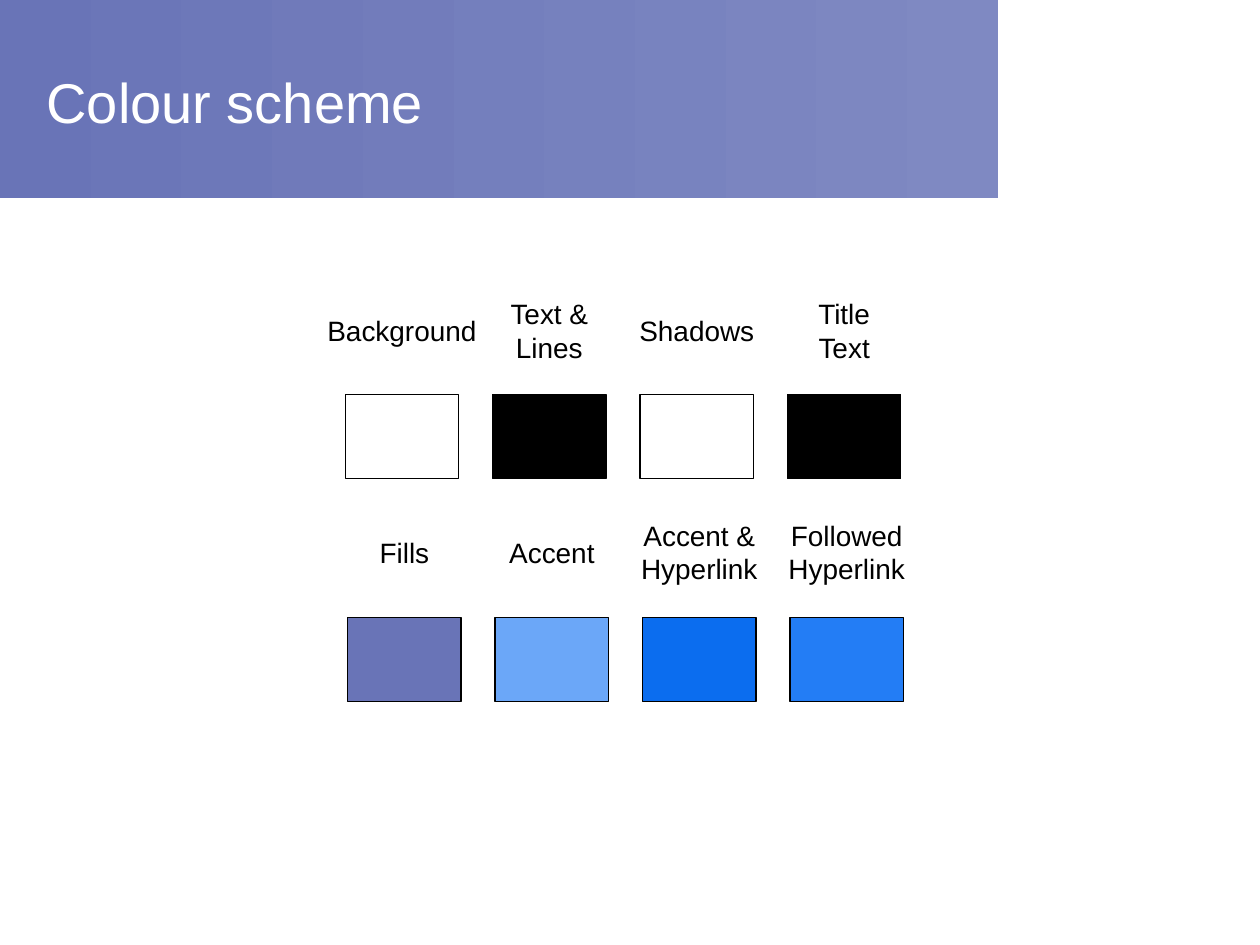
from pptx import Presentation
from pptx.dml.color import RGBColor
from pptx.enum import shapes, text
from pptx.util import Inches, Pt

COLORS = {
    "white": "FFFFFF",
    "black": "000000",
    "fills": "6974B7",
    "fade": "7F89C2",
    "accent": "6BA7F8",
    "link": "0B6DEF",
    "visited": "237DF5",
}
PITCH = 1.17
WIDE, HIGH = 0.9, 0.67

# Each row: left edge, swatch top, label centre, then (label, width, colour).
# "\n" starts a paragraph, "\v" breaks a line within one.
ROWS = [
    (2.74, 3.13, 2.62, [
        ("Background", 1.39, "white"),
        ("Text &\nLines", 0.84, "black"),
        ("Shadows", 1.11, "white"),
        ("Title\vText", 0.63, "black"),
    ]),
    (2.76, 4.9, 4.38, [
        ("Fills", 0.59, "fills"),
        ("Accent", 0.88, "accent"),
        ("Accent &\nHyperlink", 1.12, "link"),
        ("Followed\nHyperlink", 1.12, "visited"),
    ]),
]


def rgb(name):
    return RGBColor.from_string(COLORS[name])


def add_text(slide, words, x, y, w, h, size=16, color="black",
             align=text.PP_ALIGN.CENTER, wrap=False, pad=0):
    frame = slide.shapes.add_textbox(
        Inches(x), Inches(y), Inches(w), Inches(h)).text_frame
    frame.word_wrap = wrap
    frame.auto_size = (text.MSO_AUTO_SIZE.NONE if wrap
                       else text.MSO_AUTO_SIZE.SHAPE_TO_FIT_TEXT)
    frame.margin_left = frame.margin_right = Inches(pad)
    frame.vertical_anchor = text.MSO_ANCHOR.MIDDLE
    frame.text = words
    for para in frame.paragraphs:
        para.alignment = align
        para.font.name = "Arial"
        para.font.size = Pt(size)
        para.font.color.rgb = rgb(color)


def add_rect(slide, x, y, w, h):
    rect = slide.shapes.add_shape(
        shapes.MSO_SHAPE.RECTANGLE,
        Inches(x), Inches(y), Inches(w), Inches(h))
    rect.shadow.inherit = False
    return rect


def add_banner(slide):
    band = add_rect(slide, 0, 0, 7.92, 1.57)
    band.line.fill.background()
    band.fill.gradient()
    band.fill.gradient_angle = 0
    for stop, name in zip(band.fill.gradient_stops, ("fills", "fade")):
        stop.color.rgb = rgb(name)


def add_swatch(slide, x, y, color):
    box = add_rect(slide, x, y, WIDE, HIGH)
    box.fill.solid()
    box.fill.fore_color.rgb = rgb(color)
    box.line.color.rgb = rgb("black")
    box.line.width = Pt(0.75)


def add_label(slide, words, mid_x, mid_y, w):
    h = 0.64 if len(words.splitlines()) > 1 else 0.37
    add_text(slide, words, mid_x - w / 2, mid_y - h / 2, w, h)


def main():
    prs = Presentation()
    prs.slide_width, prs.slide_height = Inches(10), Inches(7.5)
    slide = prs.slides.add_slide(prs.slide_layouts[6])

    # Title banner
    add_banner(slide)
    add_text(slide, "Colour scheme", 0.27, 0.3, 7.48, 1.01, size=32,
             color="white", align=text.PP_ALIGN.LEFT, wrap=True, pad=0.1)

    # Labelled swatches
    for left, top, mid, items in ROWS:
        for col, (words, width, color) in enumerate(items):
            x = left + col * PITCH
            add_swatch(slide, x, top, color)
            add_label(slide, words, x + WIDE / 2, mid, width)

    prs.save("out.pptx")


if __name__ == "__main__":
    main()
